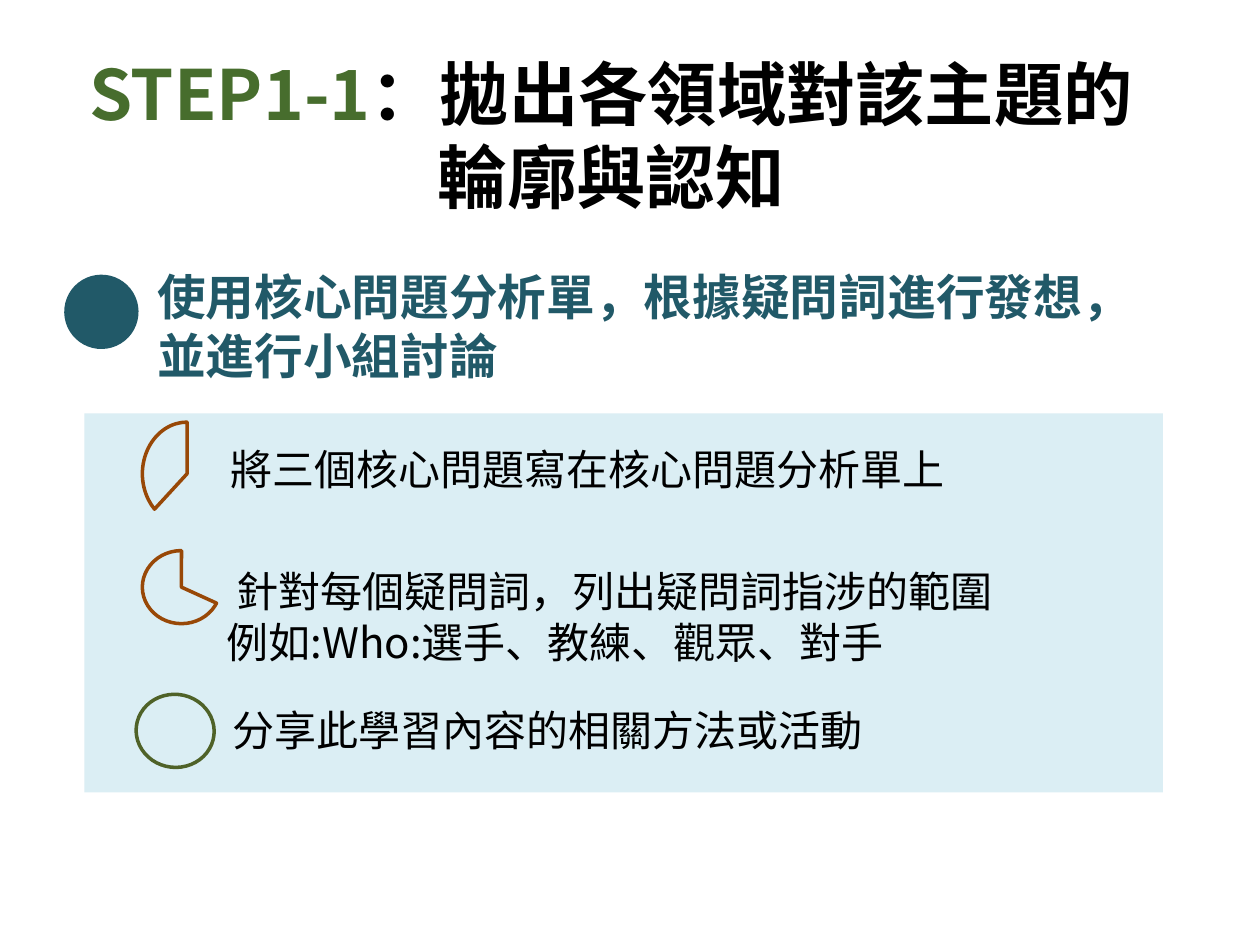
from lxml import etree
from pptx import Presentation
from pptx.dml.color import RGBColor
from pptx.enum.shapes import MSO_SHAPE
from pptx.enum.text import MSO_ANCHOR, PP_ALIGN
from pptx.oxml.ns import qn
from pptx.util import Inches, Pt

RECTANGLE, OVAL, PIE = MSO_SHAPE.RECTANGLE, MSO_SHAPE.OVAL, MSO_SHAPE.PIE
MIDDLE, CENTER = MSO_ANCHOR.MIDDLE, PP_ALIGN.CENTER
TITLE_ONLY = 5
FONT = "Noto Sans CJK SC"
COLORS = {
    "white": "FFFFFF", "black": "000000", "panel": "DBEEF4", "teal": "215968",
    "green": "476D2D", "brown": "984807", "olive": "4F6228",
}


def rgb(name):
    return RGBColor.from_string(COLORS[name])


class SlideBuilder:
    def __init__(self, deck):
        self.page = deck.slides.add_slide(deck.slide_layouts[TITLE_ONLY])

    def span(self, para, text, size, color="black", bold=False):
        span = para.add_run()
        span.text = text
        font = span.font
        font.name, font.size, font.bold = FONT, Pt(size), bold
        font.color.rgb = rgb(color)
        east_asian = etree.SubElement(font._element, qn("a:ea"))
        east_asian.set("typeface", FONT)

    def title(self, place, label, lines):
        box = self.page.shapes.title
        box.left, box.top, box.width, box.height = map(Inches, place)
        box.fill.solid()
        box.fill.fore_color.rgb = rgb("white")
        box.text_frame.vertical_anchor = MIDDLE
        para = box.text_frame.paragraphs[0]
        para.alignment = CENTER
        self.span(para, label, 39.6, "green", True)
        for index, line in enumerate(lines):
            if index:
                para.add_line_break()
            self.span(para, line, 39.6, bold=True)

    def shape(self, kind, place, fill=None, line=None, rotation=0, angles=()):
        shape = self.page.shapes.add_shape(kind, *map(Inches, place))
        shape.shadow.inherit = False
        shape.rotation = rotation
        for index, angle in enumerate(angles):
            shape.adjustments[index] = angle
        if fill:
            shape.fill.solid()
            shape.fill.fore_color.rgb = rgb(fill)
        else:
            shape.fill.background()
        if line:
            shape.line.color.rgb = rgb(line)
            shape.line.width = Pt(2)
        else:
            shape.line.fill.background()

    def text(self, place, lines, size=24, color="black", bold=False, before=0, first_margin=0):
        box = self.page.shapes.add_textbox(*map(Inches, place))
        frame = box.text_frame
        frame.word_wrap = True
        for index, line in enumerate(lines):
            para = frame.paragraphs[0] if index == 0 else frame.add_paragraph()
            para.space_before = Pt(before)
            if index == 0 and first_margin:
                para._p.get_or_add_pPr().set("marL", str(Inches(first_margin)))
            self.span(para, line, size, color, bold)


def main():
    deck = Presentation()
    deck.slide_width, deck.slide_height = Inches(10), Inches(7.5)
    builder = SlideBuilder(deck)

    builder.shape(RECTANGLE, (0.67, 3.28, 8.56, 3.01), fill="panel")
    builder.shape(OVAL, (0.51, 2.18, 0.59, 0.59), fill="teal", rotation=186.3)
    builder.text((1.15, 2.07, 7.85, 1.04), ["使用核心問題分析單，根據疑問詞進行發想，並進行小組討論"],
                 27.8, "teal", True, before=5.6)
    builder.title((0, 0.52, 9.7, 1.09), "STEP1-1", ["：拋出各領域對該主題的", "輪廓與認知"])

    builder.shape(PIE, (1.13, 3.35, 0.71, 0.82), line="brown", angles=(79.56, 162.09))
    builder.text((1.73, 3.47, 6.15, 0.5), ["將三個核心問題寫在核心問題分析單上"])

    builder.shape(PIE, (1.13, 4.37, 0.62, 0.58), line="brown", angles=(14.67, 162.09))
    builder.text((1.7, 4.44, 6.49, 0.91),
                 ["針對每個疑問詞，列出疑問詞指涉的範圍", "例如:Who:選手、教練、觀眾、對手"],
                 first_margin=0.08)

    builder.shape(OVAL, (1.08, 5.51, 0.62, 0.58), line="olive", rotation=186.3)
    builder.text((1.75, 5.54, 5.25, 0.5), ["分享此學習內容的相關方法或活動"])

    deck.save("out.pptx")


if __name__ == "__main__":
    main()
